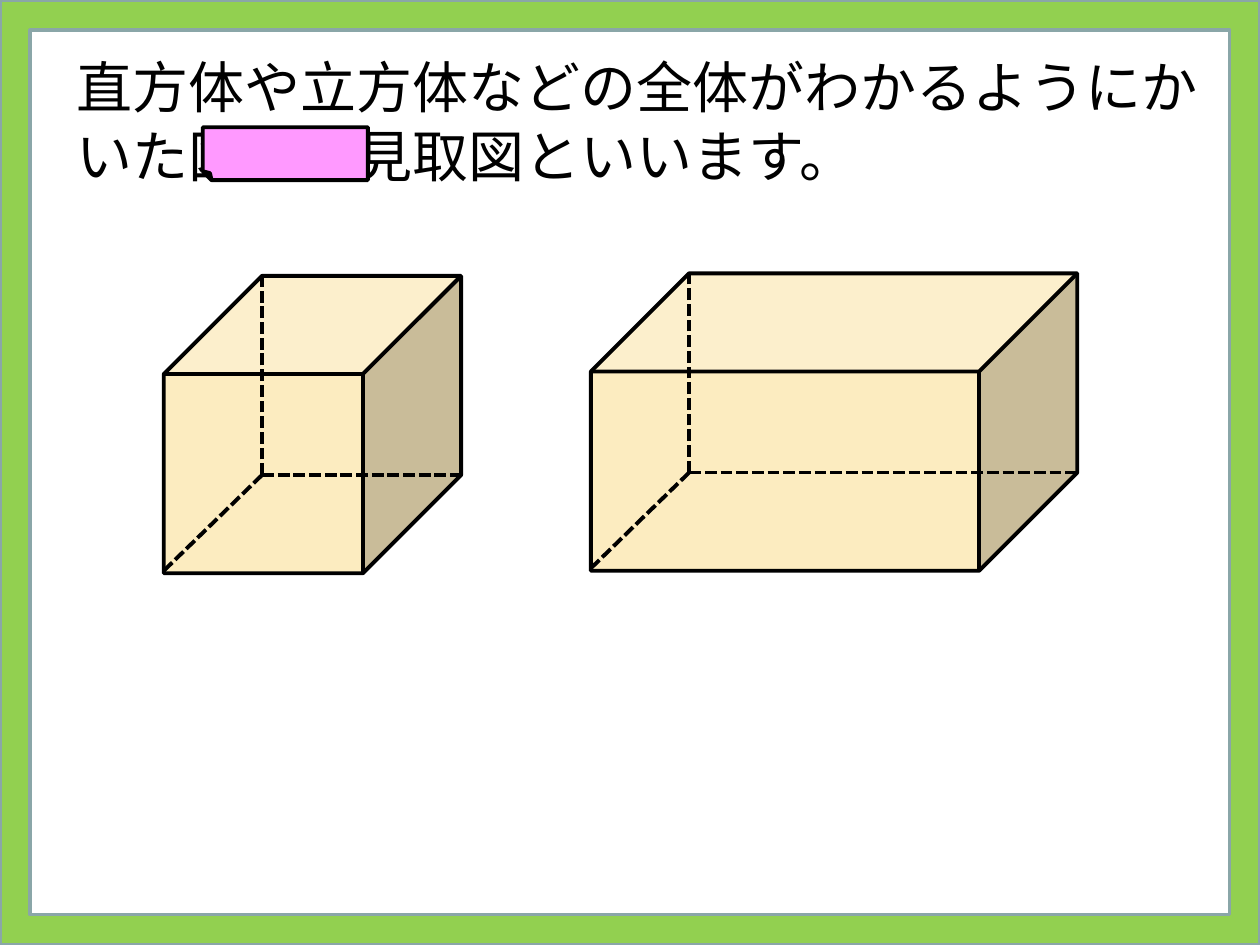
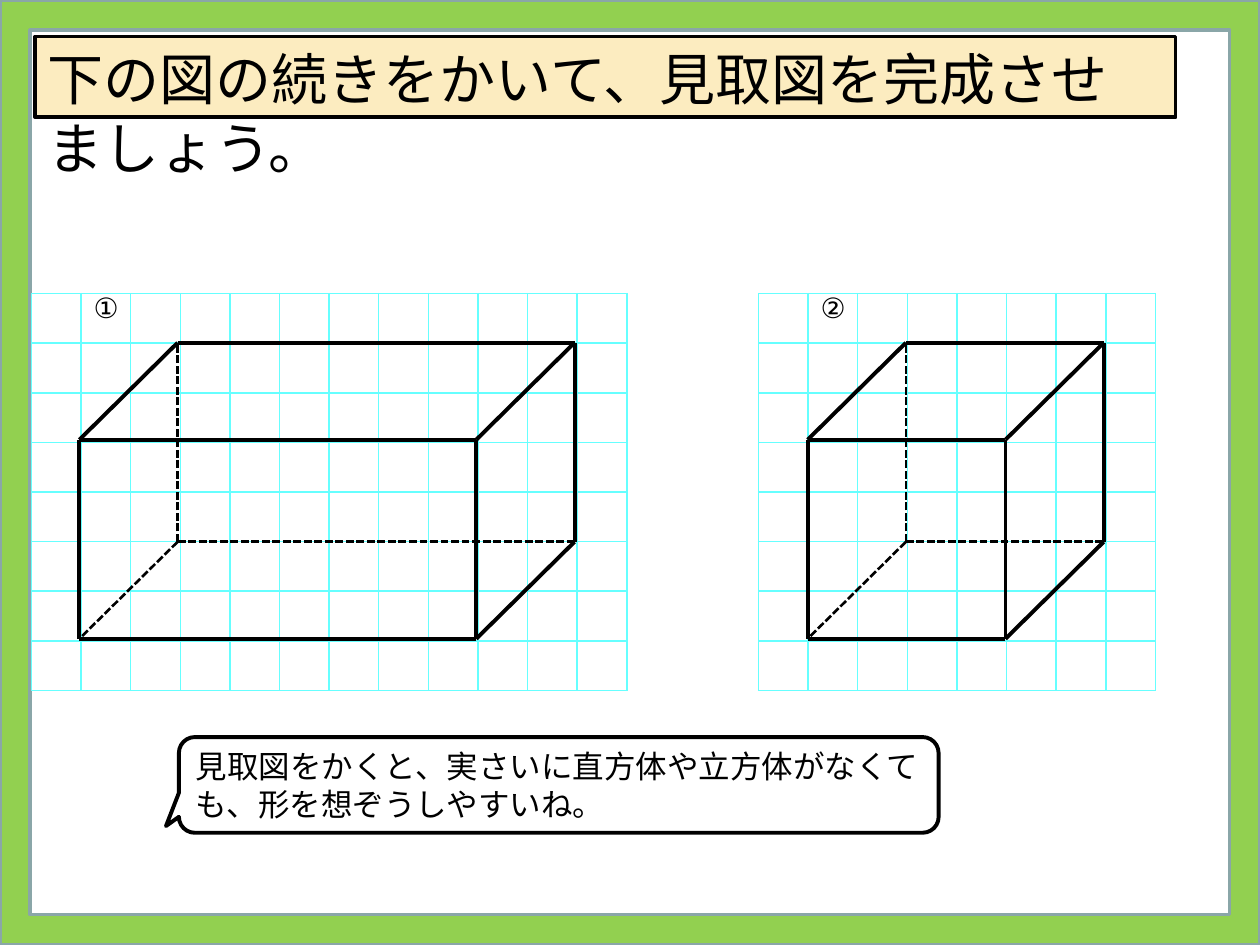
from lxml.etree import SubElement
from pptx import Presentation
from pptx.dml.color import RGBColor
from pptx.enum.dml import MSO_LINE
from pptx.enum.shapes import MSO_CONNECTOR, MSO_SHAPE
from pptx.enum.text import MSO_ANCHOR, PP_ALIGN
from pptx.oxml.ns import qn
from pptx.util import Cm, Emu, Pt

EMU_PER_PX = 9144  # 100 px to the inch
BLANK_LAYOUT = 6
GOTHIC = "Noto Sans CJK JP"
LATIN = "Arial"
BLACK = "000000"
GREEN = "92D050"
FRAME_EDGE = "8AA6A8"
CREAM = "FCECC0"
PINK = "FF99FF"
GRID_BLUE = "66FFFF"
EDGE_WIDTH = 2.25
CUBE_DEPTH = 0.33


def px(*lengths):
    return [Emu(length * EMU_PER_PX) for length in lengths]


def rgb(code):
    return RGBColor.from_string(code)


def write(frame, text, *, size, font=LATIN, color=BLACK, line_height=None,
          anchor=MSO_ANCHOR.TOP):
    frame.word_wrap = True
    frame.vertical_anchor = anchor
    para = frame.paragraphs[0]
    para.alignment = PP_ALIGN.LEFT
    if line_height:
        para.line_spacing = Pt(line_height)
    span = para.add_run()
    span.text = text
    span.font.size = Pt(size)
    span.font.name = font
    span.font.color.rgb = rgb(color)
    SubElement(span._r.get_or_add_rPr(), qn("a:ea"), typeface=font)


def add_figure(page, kind, bounds, *, fill=None, line=BLACK, width=EDGE_WIDTH,
               adjustments=()):
    figure = page.shapes.add_shape(kind, *px(*bounds))
    figure.shadow.inherit = False
    if fill:
        figure.fill.solid()
        figure.fill.fore_color.rgb = rgb(fill)
    else:
        figure.fill.background()
    figure.line.color.rgb = rgb(line)
    figure.line.width = Pt(width)
    for index, value in enumerate(adjustments):
        figure.adjustments[index] = value
    return figure


def add_edge(page, start, end, *, width=EDGE_WIDTH, dashed=False):
    edge = page.shapes.add_connector(MSO_CONNECTOR.STRAIGHT, *px(*start, *end))
    edge.line.color.rgb = rgb(BLACK)
    edge.line.width = Pt(width)
    if dashed:
        edge.line.dash_style = MSO_LINE.SQUARE_DOT
    SubElement(edge.element.spPr, qn("a:effectLst"))


def add_hidden_edges(page, corner, *, top, right, front, width):
    """Dash the three edges that meet at the unseen back corner."""
    x, y = corner
    for end in ((x, top), (right, y), front):
        add_edge(page, corner, end, width=width, dashed=True)


def add_solid_box(page, left, top, width, height):
    add_figure(page, MSO_SHAPE.CUBE, (left, top, width, height), fill=CREAM,
               adjustments=[CUBE_DEPTH])
    depth = round(height * CUBE_DEPTH)
    add_hidden_edges(page, (left + depth, top + height - depth), top=top,
                     right=left + width, front=(left, top + height - 2),
                     width=EDGE_WIDTH)


def add_wire_box(page, left, top, width, height):
    """Draw a box in lines; the position and size are those of its front face."""
    right, bottom = left + width, top + height

    def back(x, y):
        return x + 78, y - 77

    for y in (top, bottom):
        add_edge(page, (left, y), (right, y))
        add_edge(page, (right, y), back(right, y))
    for x in (left, right):
        add_edge(page, (x, top), (x, bottom))
    add_edge(page, (left, top), back(left, top))
    add_edge(page, back(left, top), back(right, top))
    add_edge(page, back(right, top), back(right, bottom))
    add_hidden_edges(page, back(left, bottom), top=back(left, top)[1],
                     right=back(right, bottom)[0], front=(left, bottom), width=1.5)


def style_grid_cell(cell):
    cell.margin_left, cell.margin_right, cell.margin_top, cell.margin_bottom = px(10, 0, 0, 0)
    properties = cell._tc.get_or_add_tcPr()
    for side in ("lnL", "lnR", "lnT", "lnB"):
        border = SubElement(properties, qn(f"a:{side}"), w=str(Pt(1)))
        paint = SubElement(border, qn("a:solidFill"))
        SubElement(paint, qn("a:srgbClr"), val=GRID_BLUE)
    cell.fill.background()


def add_grid(page, left, top, columns, rows, number):
    """Add squared paper of 1 cm cells with the exercise number in it."""
    table = page.shapes.add_table(rows, columns, *px(left, top),
                                  Cm(columns), Cm(rows)).table
    table.first_row = table.horz_banding = False
    for line in (*table.columns,):
        line.width = Cm(1)
    for line in (*table.rows,):
        line.height = Cm(1)
    for cell in table.iter_cells():
        style_grid_cell(cell)
    write(table.cell(0, 1).text_frame, number, size=16)


def add_master_frame(deck, page):
    """Draw the green frame and move it to the master that all slides share."""
    frame = add_figure(page, MSO_SHAPE.FRAME, (0, 0, 1000, 750), fill=GREEN,
                       line=FRAME_EDGE, width=2, adjustments=[0.032])
    deck.slide_master.shapes.element.append(frame.element)


def build_definition(page):
    box = page.shapes.add_textbox(*px(51, 35, 912, 118))
    write(box.text_frame,
          "直方体や立方体などの全体がわかるようにかいた図を、見取図といいます。",
          size=32, font=GOTHIC, line_height=39.5)
    sticker = add_figure(page, MSO_SHAPE.FOLDED_CORNER, (161, 101, 131, 42), fill=PINK)
    sticker.element.spPr.xfrm.set("flipH", "1")
    add_solid_box(page, 130, 219, 236, 236)
    add_solid_box(page, 469, 217, 386, 236)


def build_exercise(page):
    banner = add_figure(page, MSO_SHAPE.RECTANGLE, (28, 29, 905, 64), fill=CREAM)
    write(banner.text_frame, "下の図の続きをかいて、見取図を完成させましょう。",
          size=32, font=GOTHIC, line_height=39.5)
    for number, grid_left, columns, box_left, box_width in (
            ("①", 25, 12, 63, 315), ("②", 602, 8, 641, 157)):
        add_grid(page, grid_left, 233, columns, 8, number)
        add_wire_box(page, box_left, 349, box_width, 158)
    hint = add_figure(page, MSO_SHAPE.ROUNDED_RECTANGULAR_CALLOUT,
                      (142, 585, 603, 76), adjustments=[-0.517, 0.43, 0.167])
    write(hint.text_frame,
          "見取図をかくと、実さいに直方体や立方体がなくても、形を想ぞうしやすいね。",
          size=18, line_height=21.7, anchor=MSO_ANCHOR.MIDDLE)


def main():
    deck = Presentation()
    deck.slide_width, deck.slide_height = px(1000, 750)
    layout = deck.slide_layouts[BLANK_LAYOUT]
    pages = [deck.slides.add_slide(layout) for _ in range(2)]
    for page in pages:
        for placeholder in list(page.placeholders):
            placeholder.element.getparent().remove(placeholder.element)
    add_master_frame(deck, pages[0])
    build_definition(pages[0])
    build_exercise(pages[1])
    deck.save("out.pptx")


if __name__ == "__main__":
    main()
